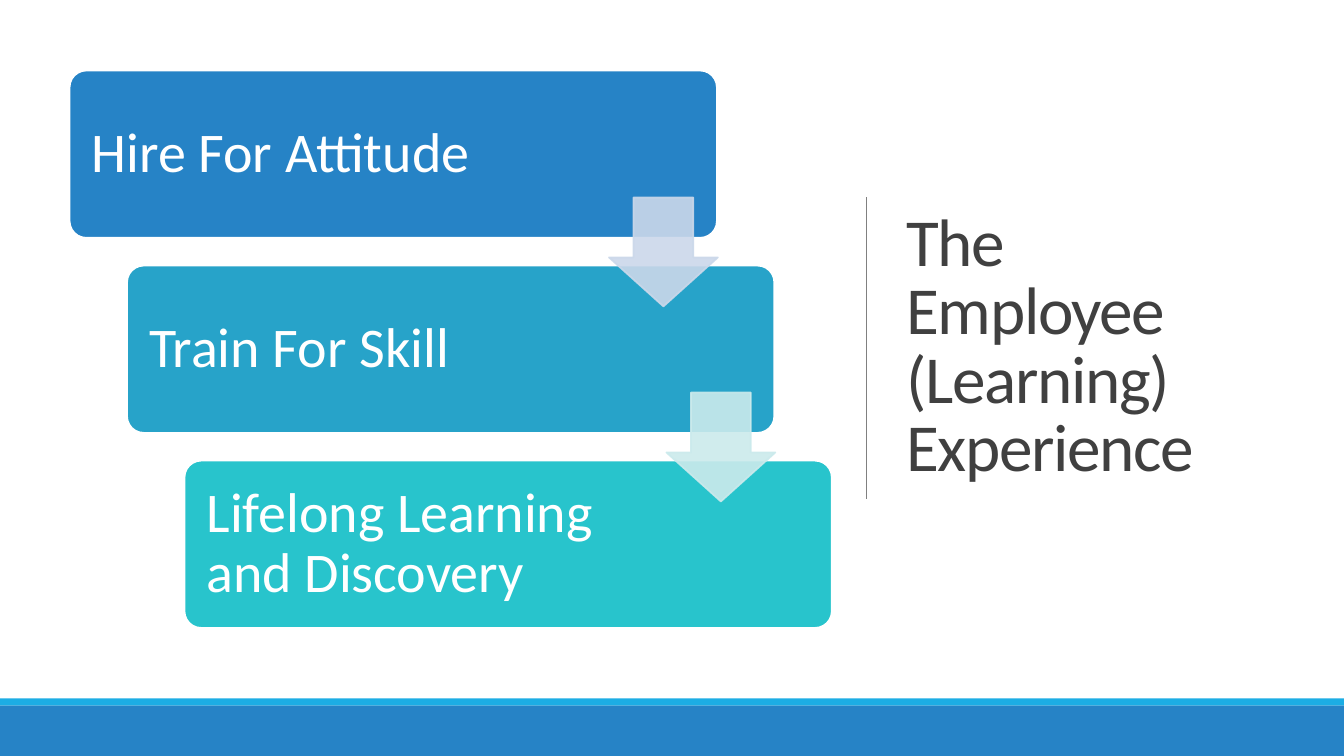
import pptx
import pptx.util
import pptx.dml.color
import pptx.enum.shapes
import pptx.enum.text
import lxml.etree

Inches = pptx.util.Inches
Pt = pptx.util.Pt
RGBColor = pptx.dml.color.RGBColor
SHAPE = pptx.enum.shapes.MSO_SHAPE
ANCHOR = pptx.enum.text.MSO_ANCHOR
ALIGN = pptx.enum.text.PP_ALIGN
NS = "{http://schemas.openxmlformats.org/drawingml/2006/main}"

WHITE = RGBColor(0xFF, 0xFF, 0xFF)
BLUE = RGBColor(0x26, 0x83, 0xC6)
SKY = RGBColor(0x1C, 0xAD, 0xE4)
INK = RGBColor(0x40, 0x40, 0x40)
GRAY = RGBColor(0x80, 0x80, 0x80)
TEAL = RGBColor(0x27, 0xA3, 0xC9)
AQUA = RGBColor(0x28, 0xC4, 0xCC)
PALE = RGBColor(0xCB, 0xD8, 0xEA)
MINT = RGBColor(0xCB, 0xEA, 0xEC)

# Label, box colour, colour of the arrow to the next step
STEPS = [
    ("Hire For Attitude", BLUE, PALE),
    ("Train For Skill", TEAL, MINT),
    ("Lifelong Learning and Discovery", AQUA, None),
]


def add_block(slide, kind, left, top, width, height, fill, line=None):
    block = slide.shapes.add_shape(
        kind, Inches(left), Inches(top), Inches(width), Inches(height))
    block.shadow.inherit = False
    block.fill.solid()
    block.fill.fore_color.rgb = fill
    if line is None:
        block.line.fill.background()
    else:
        block.line.color.rgb = line
        block.line.width = Pt(1.25)
    return block


def write(shape, text, size, color, spacing, insets):
    """Fill a shape with one left-aligned paragraph, centred vertically."""
    frame = shape.text_frame
    frame.word_wrap = True
    frame.vertical_anchor = ANCHOR.MIDDLE
    (frame.margin_left, frame.margin_top,
     frame.margin_right, frame.margin_bottom) = map(Inches, insets)
    para = frame.paragraphs[0]
    para.alignment = ALIGN.LEFT
    para.line_spacing = spacing
    run = para.add_run()
    run.text = text
    run.font.name = "Calibri"
    run.font.size = Pt(size)
    run.font.color.rgb = color
    return run


def add_arrow(slide, left, top, size, color):
    """Draw a slightly see-through arrow pointing down."""
    arrow = add_block(slide, SHAPE.DOWN_ARROW, left, top, size, size, color, color)
    arrow.adjustments[0] = 0.55
    arrow.adjustments[1] = 0.45
    for tint in arrow._element.spPr.iter(NS + "srgbClr"):
        lxml.etree.SubElement(tint, NS + "alpha", val="90000")


def add_steps(slide, left, top, width, height):
    """Stagger the steps down the box, then lay the arrows over them."""
    shift, gap, size = 0.57, 0.275, 1.08
    wide = width - shift * (len(STEPS) - 1)
    tall = (height - gap * (len(STEPS) - 1)) / len(STEPS)
    spots = [(left + i * shift, top + i * (tall + gap)) for i in range(len(STEPS))]
    for (label, fill, _), (x, y) in zip(STEPS, spots):
        box = add_block(slide, SHAPE.ROUNDED_RECTANGLE, x, y, wide, tall, fill, WHITE)
        box.adjustments[0] = 0.1
        write(box, label, 40, WHITE, 0.9, (0.17, 0.1, 1.81, 0.1))
    for (_, _, tint), (x, y) in zip(STEPS, spots):
        if tint is not None:
            add_arrow(slide, x + wide - size + 0.01, y + 1.26, size, tint)


def add_title(slide, left, top, width, height):
    """Place the title with a thin rule to its left."""
    box = slide.shapes.add_textbox(
        Inches(left), Inches(top), Inches(width), Inches(height))
    run = write(box, "The Employee (Learning) Experience", 48, INK, 0.85, [0.05] * 4)
    run.font._element.set("spc", "-100")
    x, mid = left - 0.35, top + height / 2
    rule = slide.shapes.add_connector(
        pptx.enum.shapes.MSO_CONNECTOR.STRAIGHT,
        Inches(x), Inches(mid - 1.5), Inches(x), Inches(mid + 1.5))
    rule.line.color.rgb = GRAY
    rule.line.width = Pt(0.5)
    lxml.etree.SubElement(rule._element.spPr, NS + "effectLst")


def add_footer(slide, left, top, width, height):
    strip = 0.07
    add_block(slide, SHAPE.RECTANGLE, left, top, width, strip, SKY)
    add_block(slide, SHAPE.RECTANGLE, left, top + strip, width, height - strip, BLUE)


def main():
    deck = pptx.Presentation()
    deck.slide_width = Inches(13.33)
    deck.slide_height = Inches(7.5)
    slide = deck.slides.add_slide(deck.slide_layouts[6])
    add_footer(slide, 0, 6.93, 13.33, 0.57)
    add_title(slide, 8.94, 0.69, 3.69, 5.53)
    add_steps(slide, 0.69, 0.7, 7.56, 5.53)
    deck.save("out.pptx")


if __name__ == "__main__":
    main()
